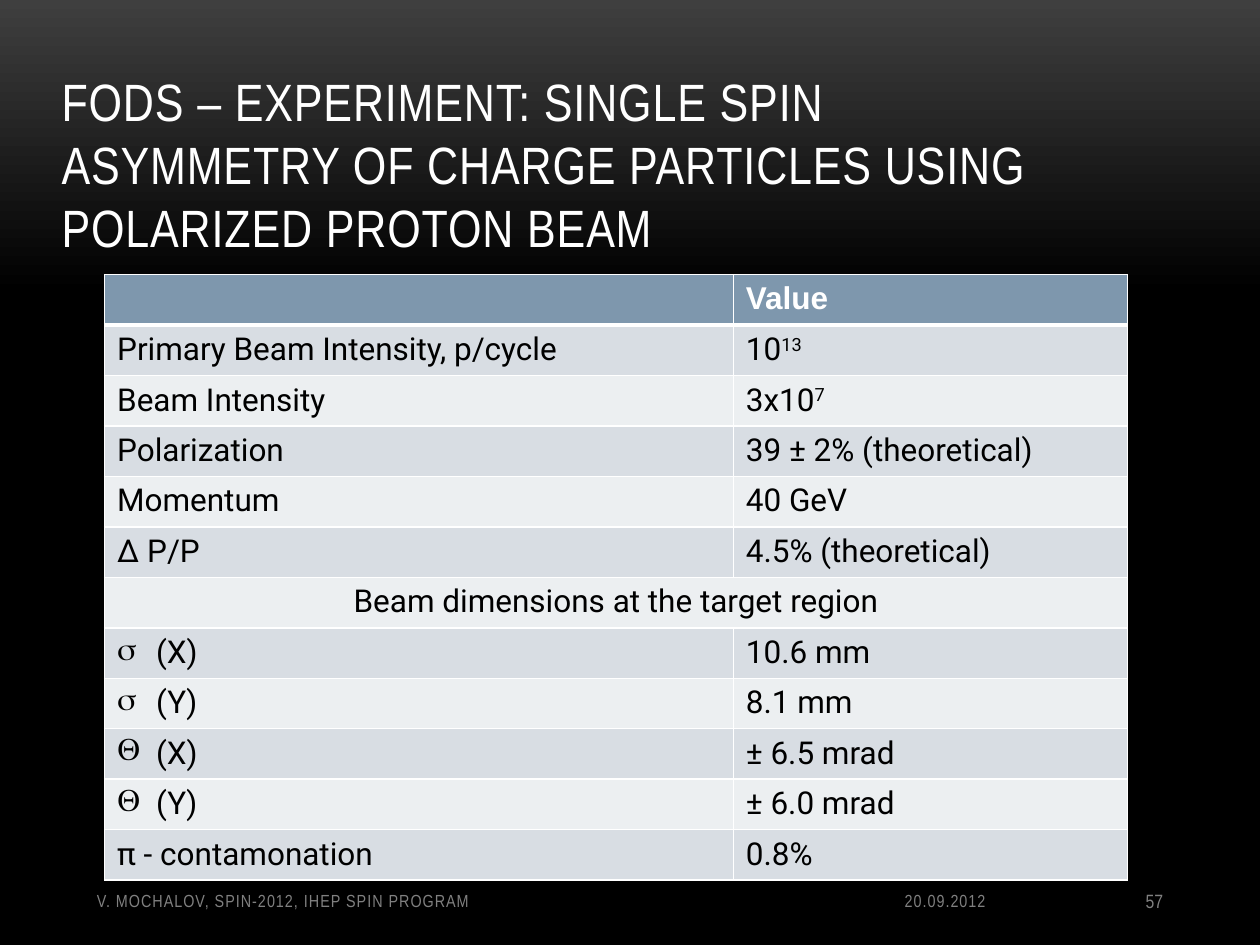
from copy import deepcopy
from dataclasses import dataclass

from pptx import Presentation
from pptx.dml.color import RGBColor
from pptx.enum.text import MSO_ANCHOR, PP_ALIGN
from pptx.oxml import parse_xml
from pptx.oxml.ns import nsdecls
from pptx.util import Inches, Pt


@dataclass(frozen=True)
class Theme:
    top: str = "3F3F3F"
    base: str = "000000"
    white: str = "FFFFFF"
    muted: str = "808080"
    header: str = "7E97AD"
    bands: tuple = ("D8DDE3", "ECEFF1")
    heading_font: str = "Arial Narrow"
    header_font: str = "Arial"
    body_font: str = "Roboto"
    title: int = 30
    body: int = 18
    footer: int = 10
    number: int = 11


T = Theme()

# Each row: label, value, then a superscript or a bullet where needed
ROWS = [
    ("Primary Beam Intensity, p/cycle", "10", {"power": "13"}),
    ("Beam Intensity", "3x10", {"power": "7"}),
    ("Polarization", "39 ± 2% (theoretical)", {}),
    ("Momentum", "40 GeV", {}),
    ("Δ P/P", "4.5% (theoretical)", {}),
    ("Beam dimensions at the target region", None, {}),
    ("(X)", "10.6 mm", {"bullet": "σ"}),
    ("(Y)", "8.1 mm", {"bullet": "σ"}),
    ("(X)", "± 6.5 mrad", {"bullet": "Θ"}),
    ("(Y)", "± 6.0 mrad", {"bullet": "Θ"}),
    ("π - contamonation", "0.8%", {}),
]


def set_font(p, name, size, color, bold=False):
    f = p.font
    f.name, f.size, f.bold = name, Pt(size), bold
    f.color.rgb = RGBColor.from_string(color)


def paint_background(s):
    fill = s.background.fill
    fill.gradient()
    fill.gradient_angle = 270
    for stop, color, pos in zip(fill.gradient_stops, (T.top, T.base), (0, 0.31)):
        stop.color.rgb = RGBColor.from_string(color)
        stop.position = pos
    stops = s._element.xpath(".//a:gsLst")[0]
    last = deepcopy(stops[-1])
    last.set("pos", "100000")
    stops.append(last)


def add_text(s, box, text, size, color, anchor=MSO_ANCHOR.MIDDLE,
             align=PP_ALIGN.LEFT, spacing=0):
    tf = s.shapes.add_textbox(*map(Inches, box)).text_frame
    tf.word_wrap = True
    tf.vertical_anchor = anchor
    p = tf.paragraphs[0]
    p.alignment = align
    r = p.add_run()
    r.text = text
    if spacing:
        r._r.get_or_add_rPr().set("spc", str(round(spacing * 100)))
    set_font(p, T.heading_font, size, color)


def style_cell(cell, color, bottom=1):
    cell.fill.solid()
    cell.fill.fore_color.rgb = RGBColor.from_string(color)
    tc_pr = cell._tc.get_or_add_tcPr()
    widths = {"lnL": 1, "lnR": 1, "lnT": 1, "lnB": bottom}
    for i, (side, width) in enumerate(widths.items()):
        tc_pr.insert(i, parse_xml(
            f'<a:{side} {nsdecls("a")} w="{Pt(width)}"><a:solidFill>'
            f'<a:srgbClr val="{T.white}"/></a:solidFill></a:{side}>'))


def write_cell(cell, text, power=None, bullet=None):
    p = cell.text_frame.paragraphs[0]
    if bullet:
        p_pr = p._p.get_or_add_pPr()
        indent = Inches(0.31)
        p_pr.set("marL", str(indent))
        p_pr.set("indent", str(-indent))
        p_pr.append(parse_xml(f'<a:buChar {nsdecls("a")} char="{bullet}"/>'))
    p.add_run().text = text
    if power:
        r = p.add_run()
        r.text = power
        r.font._element.set("baseline", "30000")
    set_font(p, T.body_font, T.body, T.base)
    return p


def add_beam_table(s):
    widths, row_h = (4.99, 3.13), 0.39
    count = len(ROWS) + 1
    box = (0.83, 2.18, sum(widths), row_h * count)
    tbl = s.shapes.add_table(count, 2, *map(Inches, box)).table
    for col, width in zip(tbl.columns, widths):
        col.width = Inches(width)

    # Header row
    for cell in tbl.rows[0].cells:
        style_cell(cell, T.header, bottom=3)
    p = tbl.cell(0, 1).text_frame.paragraphs[0]
    p.add_run().text = "Value"
    set_font(p, T.header_font, T.body, T.white, bold=True)

    # Banded body rows; a row without a value spans both columns
    for i, (label, value, extra) in enumerate(ROWS):
        left, right = tbl.rows[i + 1].cells
        for cell in (left, right):
            style_cell(cell, T.bands[i % 2], bottom=1)
        p = write_cell(left, label, bullet=extra.get("bullet"))
        if value is None:
            left.merge(right)
            p.alignment = PP_ALIGN.CENTER
        else:
            write_cell(right, value, power=extra.get("power"))


def main():
    prs = Presentation()
    prs.slide_width, prs.slide_height = Inches(10), Inches(7.5)
    s = prs.slides.add_slide(prs.slide_layouts[6])
    paint_background(s)

    # Title
    add_text(s, (0.39, 0.25, 8.4, 1.85),
             "FODS – EXPERIMENT: SINGLE SPIN ASYMMETRY OF CHARGE PARTICLES "
             "USING POLARIZED PROTON BEAM",
             T.title, T.white, anchor=MSO_ANCHOR.BOTTOM, spacing=0.5)

    add_beam_table(s)

    # Footer: left, width, text, size, alignment, letter spacing
    for left, width, text, size, align, spacing in (
        (0.67, 3.17, "V. MOCHALOV, SPIN-2012, IHEP SPIN PROGRAM",
         T.footer, PP_ALIGN.LEFT, 0.6),
        (6.25, 1.67, "20.09.2012", T.footer, PP_ALIGN.RIGHT, 0.6),
        (8.25, 1.08, "57", T.number, PP_ALIGN.RIGHT, 0),
    ):
        add_text(s, (left, 6.95, width, 0.4), text, size, T.muted,
                 align=align, spacing=spacing)

    prs.save("out.pptx")


if __name__ == "__main__":
    main()
